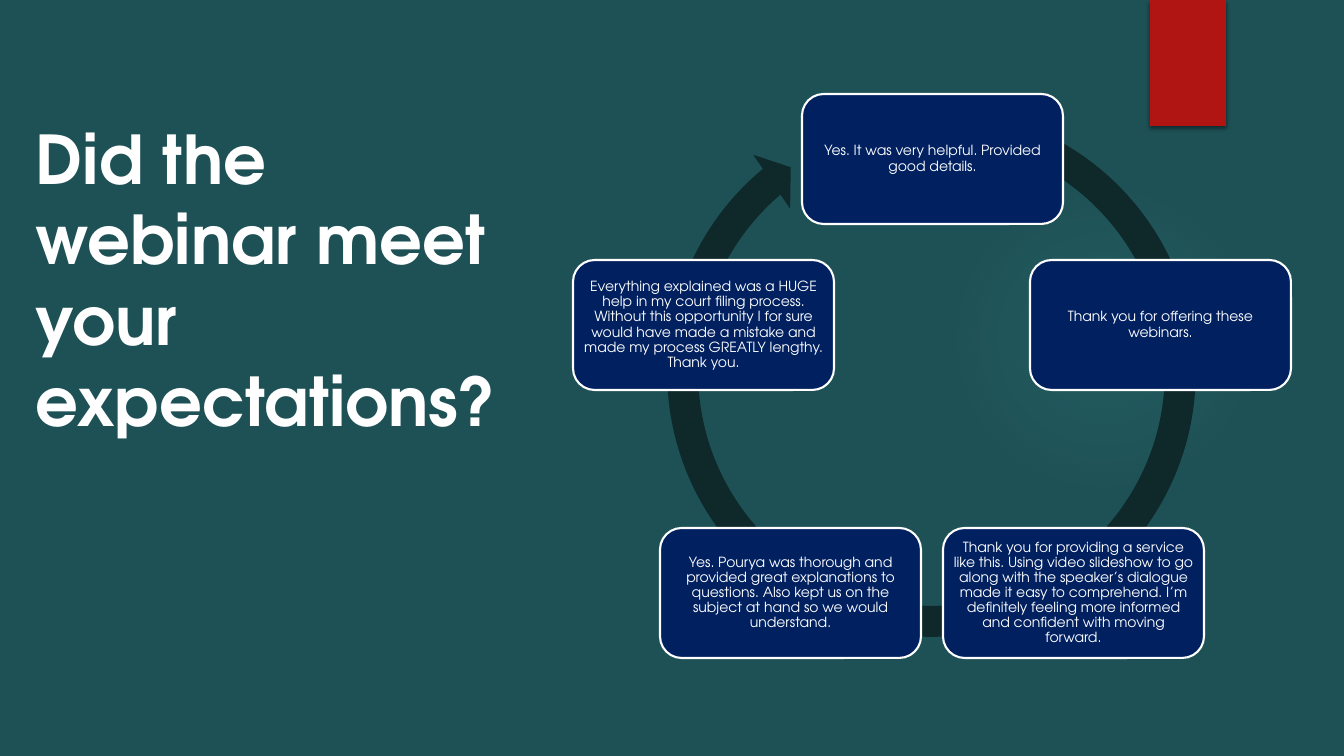
import math

import pptx
import pptx.dml.color
import pptx.enum.shapes
import pptx.enum.text
import pptx.oxml
import pptx.oxml.ns
import pptx.util

EMU_PER_PX = 914400 / 100.8
FONT = "TeX Gyre Adventor"
WHITE = "FFFFFF"
SHAPE = pptx.enum.shapes.MSO_SHAPE
ANCHOR = pptx.enum.text.MSO_ANCHOR
ALIGN = pptx.enum.text.PP_ALIGN

RING_CENTER = (932, 399)
RING_RADIUS = 240
CARD_SIZE = (261, 130)
COMMENTS = [
    "Yes. It was very helpful. Provided good details.",
    "Thank you for offering these webinars.",
    "Thank you for providing a service like this. Using video slideshow to go along "
    "with the speaker’s dialogue made it easy to comprehend. I’m definitely feeling "
    "more informed and confident with moving forward.",
    "Yes. Pourya was thorough and provided great explanations to questions. Also kept "
    "us on the subject at hand so we would understand.",
    "Everything explained was a HUGE help in my court filing process. Without this "
    "opportunity I for sure would have made a mistake and made my process GREATLY "
    "lengthy. Thank you.",
]


def px(length):
    return pptx.util.Emu(round(length * EMU_PER_PX))


def color(value):
    return pptx.dml.color.RGBColor.from_string(value)


def add_xml(parent, xml):
    """Append a DrawingML element, written with the a: prefix, and return it."""
    head, rest = xml.split(">", 1)
    element = pptx.oxml.parse_xml(f"{head} {pptx.oxml.ns.nsdecls('a')}>{rest}")
    parent.append(element)
    return element


def add_shape(slide, kind, left, top, width, height, fill=None, line=None):
    shape = slide.shapes.add_shape(kind, px(left), px(top), px(width), px(height))
    shape.shadow.inherit = False
    if fill:
        shape.fill.solid()
        shape.fill.fore_color.rgb = color(fill)
    else:
        shape.fill.background()
    if line:
        shape.line.color.rgb = color(line)
        shape.line.width = pptx.util.Pt(1.5)
    else:
        shape.line.fill.background()
    return shape


def write_text(box, text, size, bold=False, align=ALIGN.LEFT, anchor=ANCHOR.TOP,
               spacing=1.0, insets=(10, 5, 10, 5)):
    """Fill a shape with one paragraph; insets run left, top, right, bottom in px."""
    frame = box.text_frame
    frame.word_wrap = True
    frame.vertical_anchor = anchor
    (frame.margin_left, frame.margin_top,
     frame.margin_right, frame.margin_bottom) = map(px, insets)
    para = frame.paragraphs[0]
    para.alignment = align
    para.line_spacing = spacing
    span = para.add_run()
    span.text = text
    span.font.name = FONT
    span.font.size = pptx.util.Pt(size)
    span.font.bold = bold
    span.font.color.rgb = color(WHITE)


def add_glow(slide):
    """Faint round highlight that fades out towards its edge."""
    glow = add_shape(slide, SHAPE.OVAL, 949, 184, 310, 310)
    stops = "".join(
        f'<a:gs pos="{place * 1000}"><a:srgbClr val="50B9C1">'
        f'<a:alpha val="{alpha * 1000}"/></a:srgbClr></a:gs>'
        for place, alpha in [(0, 7), (36, 6), (69, 0)])
    properties = glow.element.spPr
    gradient = add_xml(properties, (
        f'<a:gradFill><a:gsLst>{stops}</a:gsLst><a:path path="circle">'
        '<a:fillToRect l="50000" t="50000" r="50000" b="50000"/></a:path></a:gradFill>'))
    empty_fill = properties.find(pptx.oxml.ns.qn("a:noFill"))
    properties.replace(empty_fill, gradient)


def add_ribbon(slide):
    ribbon = add_shape(slide, SHAPE.RECTANGLE, 1150, 0, 76, 126, fill="B01513")
    effects = ribbon.element.spPr.find(pptx.oxml.ns.qn("a:effectLst"))
    add_xml(effects, (
        '<a:outerShdw blurRad="38100" dist="25400" dir="5400000" rotWithShape="0">'
        '<a:srgbClr val="000000"><a:alpha val="45000"/></a:srgbClr></a:outerShdw>'))


def add_title(slide, text):
    box = slide.shapes.add_textbox(px(26), px(112), px(529), px(528))
    write_text(box, text, 48, bold=True, insets=(10, 5, 20, 5))


def add_cycle_arrow(slide):
    arrow = add_shape(slide, SHAPE.CIRCULAR_ARROW, 650, 91, 563, 563, fill="0F282A")
    # Angles are in 60000ths of a degree, scaled down by 100000.
    sweep = [angle * 0.6 for angle in (5.51, 230.04, 289.5)]
    for index, value in enumerate([0.055, *sweep, 0.058]):
        arrow.adjustments[index] = value


def add_comment_cards(slide, comments):
    """Space the cards evenly clockwise around the ring, starting at the top."""
    width, height = CARD_SIZE
    for index, comment in enumerate(comments):
        angle = 2 * math.pi * index / len(comments)
        left = RING_CENTER[0] + RING_RADIUS * math.sin(angle) - width / 2
        top = RING_CENTER[1] - RING_RADIUS * math.cos(angle) - height / 2
        card = add_shape(slide, SHAPE.ROUNDED_RECTANGLE, round(left), round(top),
                         width, height, fill="002060", line=WHITE)
        write_text(card, comment, 10, align=ALIGN.CENTER, anchor=ANCHOR.MIDDLE,
                   spacing=0.9, insets=(4, 4, 4, 4))


def main():
    deck = pptx.Presentation()
    deck.slide_width, deck.slide_height = px(1344), px(756)
    slide = deck.slides.add_slide(deck.slide_layouts[6])
    slide.background.fill.solid()
    slide.background.fill.fore_color.rgb = color("1E5155")
    add_glow(slide)
    add_ribbon(slide)
    add_title(slide, "Did the webinar meet your expectations?")
    add_cycle_arrow(slide)
    add_comment_cards(slide, COMMENTS)
    deck.save("out.pptx")


if __name__ == "__main__":
    main()
